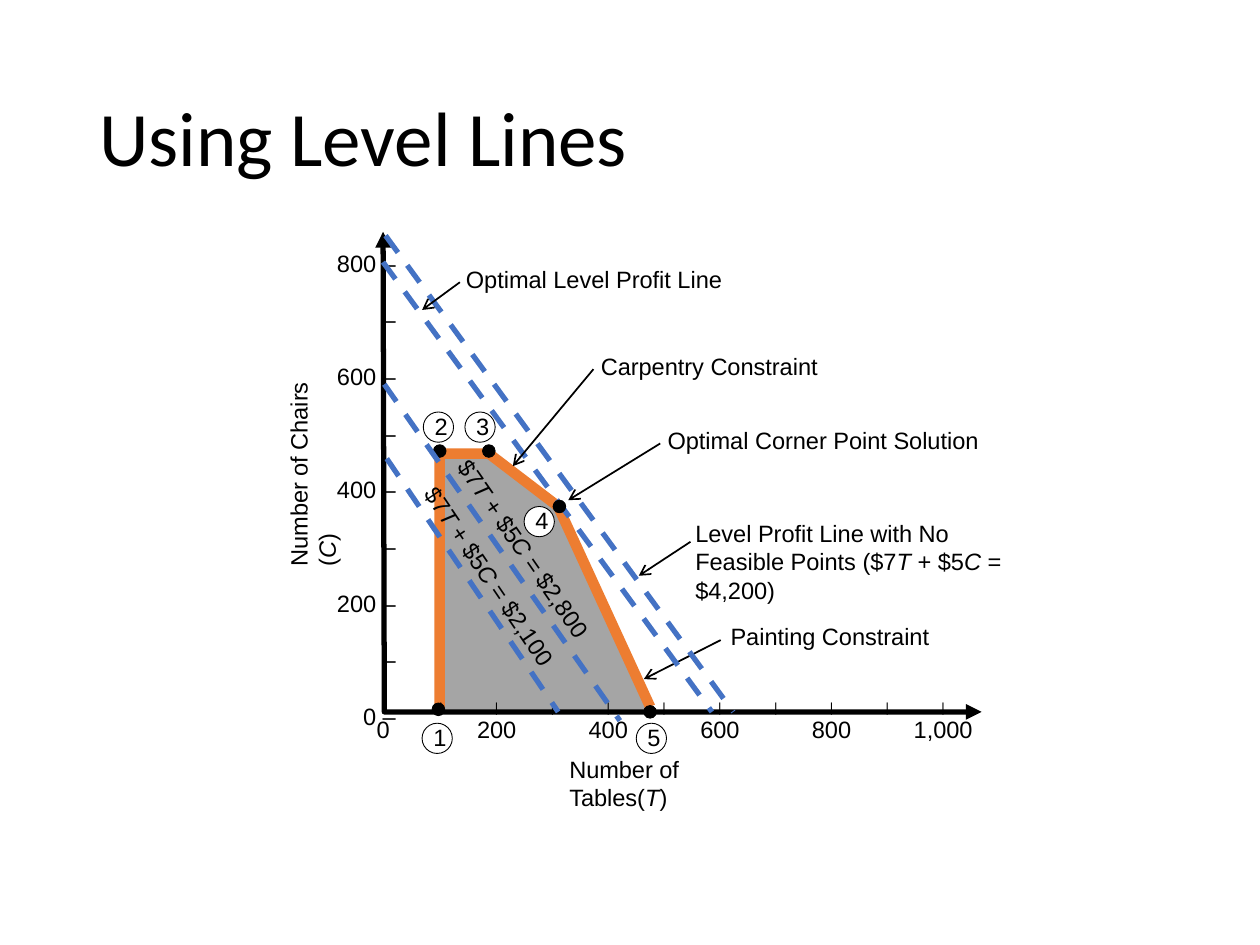
from lxml import etree
from pptx import Presentation
from pptx.dml.color import RGBColor
from pptx.enum.dml import MSO_LINE
from pptx.enum.shapes import MSO_CONNECTOR, MSO_SHAPE
from pptx.enum.text import MSO_ANCHOR, MSO_AUTO_SIZE, PP_ALIGN
from pptx.oxml.ns import qn
from pptx.util import Inches, Pt

OVAL = MSO_SHAPE.OVAL
STRAIGHT = MSO_CONNECTOR.STRAIGHT
DASH = MSO_LINE.DASH
MIDDLE = MSO_ANCHOR.MIDDLE
GROW = MSO_AUTO_SIZE.SHAPE_TO_FIT_TEXT
RIGHT = PP_ALIGN.RIGHT

COLORS = {"black": "000000", "white": "FFFFFF", "region": "A5A5A5",
          "constraint": "ED7D31", "level": "4472C4"}
BODY_SIZE = 13.5
LABEL_HEIGHT = 0.33
DOT_SIZE = 0.1
BADGE_SIZE = 0.24
TAB_FIRST, TAB_STEP, TAB_COUNT = 0.51, 0.443, 10


def color(name):
    return RGBColor.from_string(COLORS[name])


def set_line(line, name, width):
    line.color.rgb = color(name)
    line.width = Pt(width)


def add_arrowheads(shape, **ends):
    outline = shape.line._get_or_add_ln()
    for tag, kind in ends.items():
        etree.SubElement(outline, qn(f"a:{tag}"), type=kind)


def add_runs(para, runs, size=BODY_SIZE, font="Arial"):
    for text, italic in runs:
        span = para.add_run()
        span.text = text
        span.font.size = Pt(size)
        span.font.name = font
        span.font.italic = italic
        span.font.color.rgb = color("black")


def add_box(page, left, top, width, height, wrap=False, rotation=0):
    box = page.shapes.add_textbox(Inches(left), Inches(top), Inches(width), Inches(height))
    box.rotation = rotation
    box.text_frame.word_wrap = wrap
    box.text_frame.auto_size = GROW
    return box


def add_label(page, runs, left, top, width, height=LABEL_HEIGHT, wrap=False, rotation=0):
    box = add_box(page, left, top, width, height, wrap, rotation)
    add_runs(box.text_frame.paragraphs[0], runs)


def add_title(page, text):
    frame = add_box(page, 0.69, 0.4, 8.62, 1.45, wrap=True).text_frame
    frame.auto_size = MSO_AUTO_SIZE.NONE
    frame.vertical_anchor = MIDDLE
    frame.paragraphs[0].line_spacing = 0.9
    add_runs(frame.paragraphs[0], [(text, False)], 44, "Calibri")


def add_path(page, points, fill=None, line=None, width=0):
    corners = [(Inches(x), Inches(y)) for x, y in points]
    builder = page.shapes.build_freeform(*corners[0])
    builder.add_line_segments(corners[1:], close=fill is not None)
    shape = builder.convert_to_shape()
    shape.shadow.inherit = False
    if fill:
        shape.fill.solid()
        shape.fill.fore_color.rgb = color(fill)
    else:
        shape.fill.background()
    if line:
        set_line(shape.line, line, width)
    else:
        shape.line.fill.background()
    return shape


def add_circle(page, left, top, size, fill):
    circle = page.shapes.add_shape(OVAL, Inches(left), Inches(top), Inches(size), Inches(size))
    circle.shadow.inherit = False
    circle.fill.solid()
    circle.fill.fore_color.rgb = color(fill)
    set_line(circle.line, "black", 0.5)


def add_badge(page, number, left, top):
    add_circle(page, left, top, BADGE_SIZE, "white")
    add_label(page, [(number, False)], left - 0.01, top - 0.05, 0.31)


def add_straight(page, start, end, name, width):
    line = page.shapes.add_connector(STRAIGHT, *(Inches(value) for value in start + end))
    set_line(line.line, name, width)
    etree.SubElement(line._element.spPr, qn("a:effectLst"))
    return line


def add_pointer(page, start, end):
    add_arrowheads(add_straight(page, start, end, "black", 1), tailEnd="arrow")


def add_level_line(page, start, end):
    add_straight(page, start, end, "level", 3).line.dash_style = DASH


def add_tabs(para):
    tabs = etree.SubElement(para._p.get_or_add_pPr(), qn("a:tabLst"))
    for index in range(TAB_COUNT):
        position = Inches(TAB_FIRST + index * TAB_STEP)
        etree.SubElement(tabs, qn("a:tab"), pos=str(position), algn="ctr")


def add_axes(page):
    frame = add_box(page, 2.89, 5.5, 5.55, 0.45, wrap=True).text_frame
    ticks, values = frame.paragraphs[0], frame.add_paragraph()
    numbers = ["0", "200", "400", "600", "800", "1,000"]
    for para, text, size in ((ticks, "\t|" * TAB_COUNT, 7.5),
                             (values, "\t\t".join(numbers), BODY_SIZE)):
        add_tabs(para)
        add_runs(para, [(text, False)], size)

    frame = add_box(page, 2.56, 1.7, 0.68, 4.19).text_frame
    for value in range(800, -1, -100):
        para = frame.paragraphs[0] if value == 800 else frame.add_paragraph()
        para.alignment = RIGHT
        para.line_spacing = 2.0
        add_runs(para, [(f"{value} –" if value % 200 == 0 else "–", False)])

    axes = add_path(page, [(3.04, 1.84), (3.05, 5.65), (7.79, 5.65)], line="black", width=3)
    add_arrowheads(axes, headEnd="triangle", tailEnd="triangle")
    add_label(page, [("Number of Chairs (", False), ("C", True), (")", False)],
              1.52, 3.35, 1.93, 0.56, wrap=True, rotation=270)
    add_label(page, [("Number of Tables(", False), ("T", True), (")", False)],
              4.42, 5.94, 1.88, 0.56, wrap=True)


def profit_runs(before, after):
    return [(before + "$7", False), ("T", True), (" + $5", False), ("C", True), (after, False)]


def add_feasible_region(page):
    add_path(page, [(3.48, 5.65), (3.49, 3.6), (3.88, 3.6), (4.43, 4.03), (5.16, 5.64)],
             fill="region")
    add_path(page, [(3.49, 5.64), (3.49, 3.6), (3.88, 3.6), (4.43, 4.02), (5.16, 5.61)],
             line="constraint", width=6)
    for left, top in ((3.83, 3.53), (3.44, 3.53), (3.43, 5.58), (5.11, 5.6)):
        add_circle(page, left, top, DOT_SIZE, "black")
    badges = ((3.35, 5.74), (3.36, 3.27), (3.69, 3.27), (4.16, 4.02), (5.05, 5.74))
    for number, (left, top) in enumerate(badges, 1):
        add_badge(page, str(number), left, top)


def add_callouts(page):
    callouts = (
        ("Carpentry Constraint", (4.67, 2.74, 1.95), (4.71, 2.93), (4.07, 3.7)),
        ("Optimal Level Profit Line", (3.6, 2.05, 2.26), (3.65, 2.24), (3.35, 2.46)),
        ("Optimal Corner Point Solution", (5.2, 3.33, 2.71), (5.24, 3.52), (4.51, 3.97)),
    )
    add_pointer(page, (5.72, 5.08), (5.11, 5.39))
    add_label(page, [("Painting Constraint", False)], 5.7, 4.89, 1.8)
    add_level_line(page, (3.04, 2.08), (5.65, 5.65))
    add_level_line(page, (3.06, 1.87), (5.82, 5.65))
    add_pointer(page, (5.48, 4.3), (5.07, 4.57))
    add_label(page, profit_runs("Level Profit Line with No Feasible Points (", " = $4,200)"),
              5.42, 4.07, 2.95, 0.78, wrap=True)
    for text, place, start, end in callouts:
        add_pointer(page, start, end)
        add_label(page, [(text, False)], *place)
    add_circle(page, 4.39, 3.97, DOT_SIZE, "black")


def add_feasible_levels(page):
    levels = (
        (" = $2,800", (3.05, 3.05), (4.92, 5.72), (3.22, 4.2), 55.3),
        (" = $2,100", (3.07, 3.64), (4.43, 5.65), (2.95, 4.42), 55.9),
    )
    for profit, start, end, corner, angle in levels:
        add_level_line(page, start, end)
        add_label(page, profit_runs("", profit), *corner, 1.88, rotation=angle)


def main():
    deck = Presentation()
    deck.slide_width, deck.slide_height = Inches(10), Inches(7.5)
    page = deck.slides.add_slide(deck.slide_layouts[6])
    add_feasible_region(page)
    add_title(page, "Using Level Lines")
    add_axes(page)
    add_callouts(page)
    add_feasible_levels(page)
    deck.save("out.pptx")


if __name__ == "__main__":
    main()
